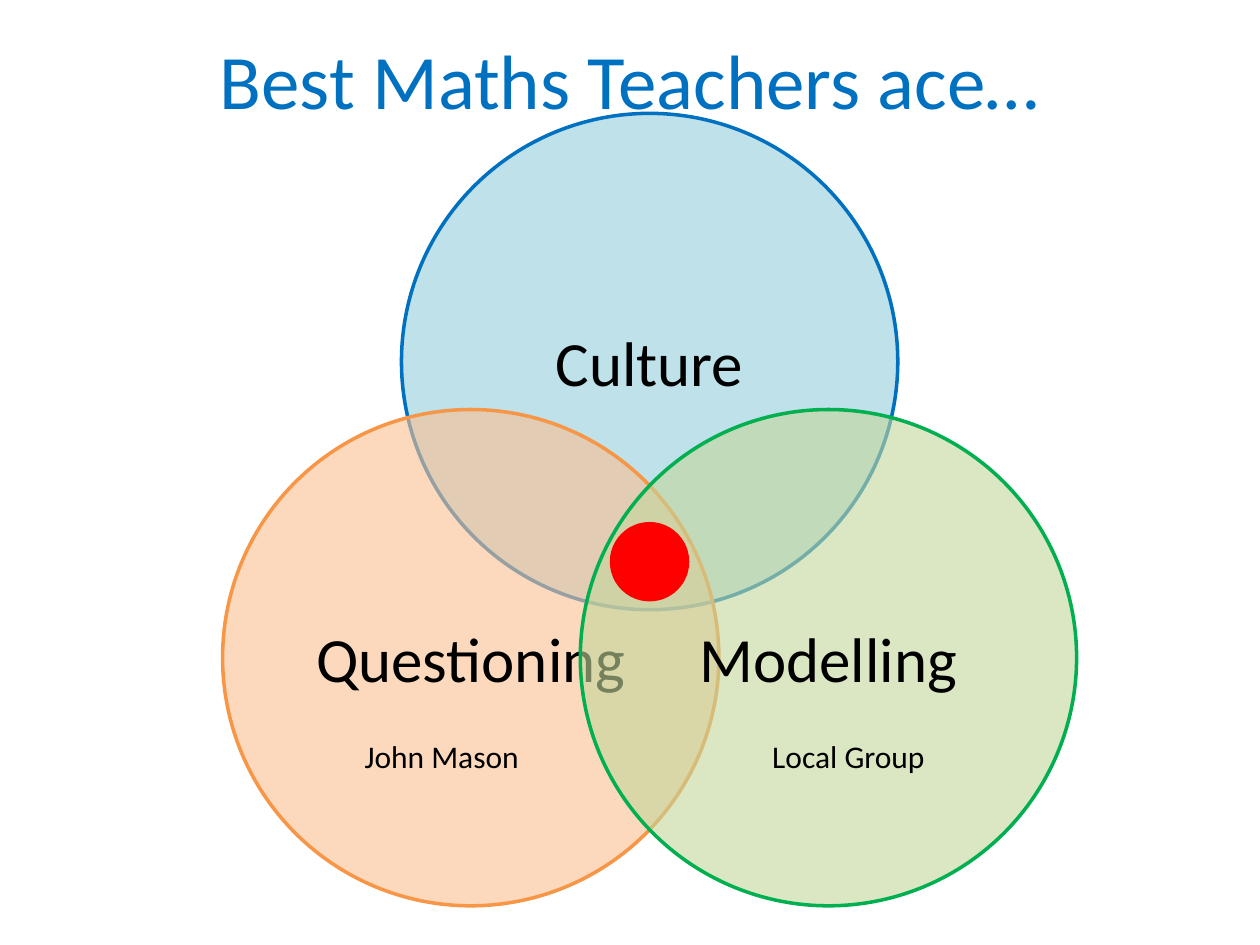
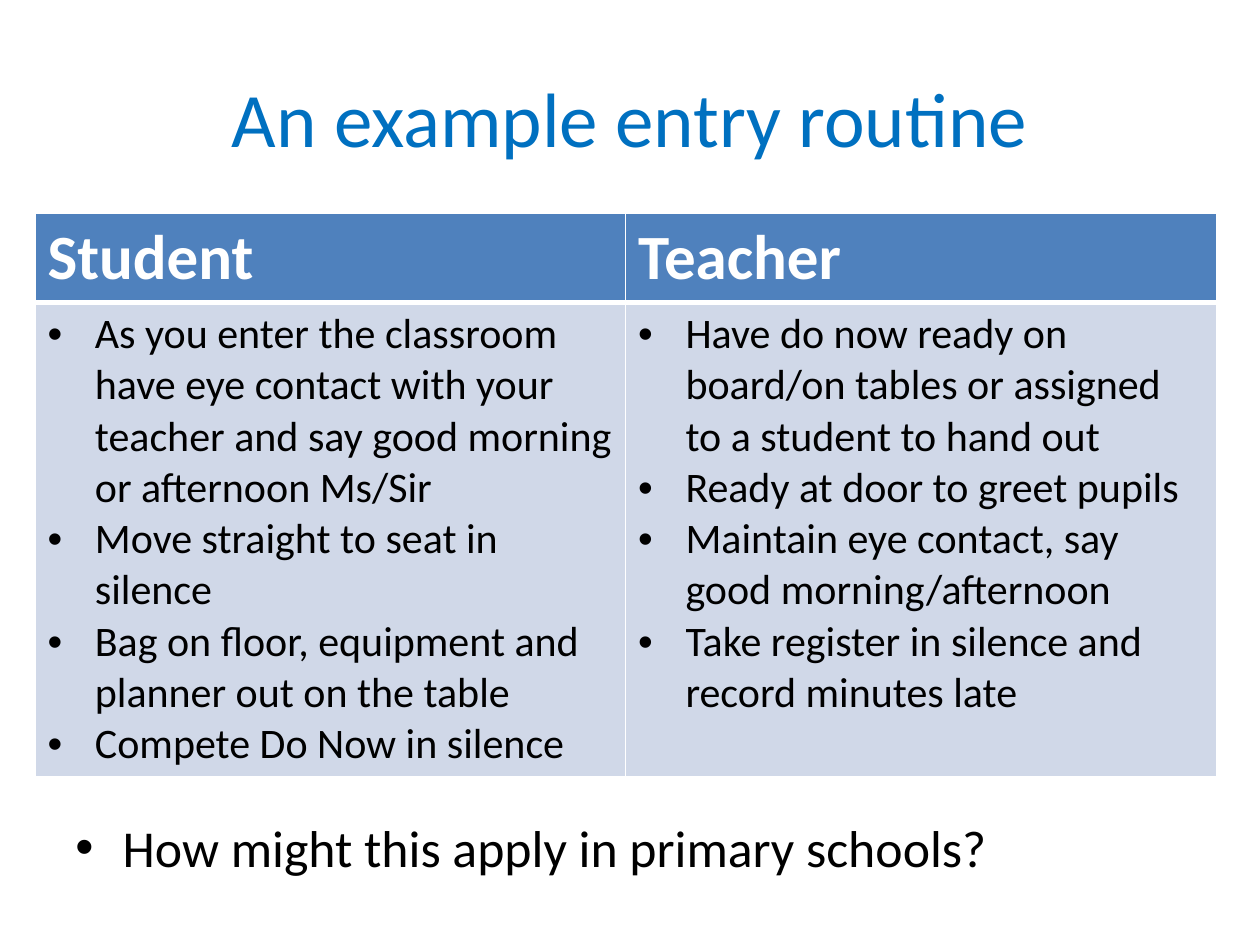
from dataclasses import dataclass

from lxml.etree import SubElement
from pptx import Presentation
from pptx.dml.color import RGBColor as RGB
from pptx.enum.shapes import MSO_SHAPE as SHAPE
from pptx.enum.text import MSO_ANCHOR as ANCHOR, MSO_AUTO_SIZE as AUTO, PP_ALIGN as ALIGN
from pptx.oxml.ns import qn
from pptx.util import Pt


@dataclass(frozen=True)
class Theme:
    font: str = "Calibri"
    title: str = "0070C0"
    text: str = "000000"
    white: str = "FFFFFF"
    header: str = "4F81BD"
    body: str = "D0D8E8"
    dot: str = "FF0000"
    culture: tuple = ("93CDDD", "0070C0")
    questioning: tuple = ("FAC090", "F79646")
    modelling: tuple = ("C3D69B", "00B050")
    title_size: float = 44
    heading_size: float = 36
    question_size: float = 29.6
    cell_size: float = 24
    note_size: float = 18
    indent: float = 27


T = Theme()
ROUTINE = {
    "Student": [
        "As you enter the classroom have eye contact with your teacher and say good morning or afternoon Ms/Sir",
        "Move straight to seat in silence",
        "Bag on floor, equipment and planner out on the table",
        "Compete Do Now in silence",
    ],
    "Teacher": [
        "Have do now ready on board/on tables or assigned to a student to hand out",
        "Ready at door to greet pupils",
        "Maintain eye contact, say good morning/afternoon",
        "Take register in silence and record minutes late",
    ],
}


def style_text(tf, size, color=T.text, align=ALIGN.LEFT, bold=False):
    for p in tf.paragraphs:
        p.alignment = align
        for r in p.runs:
            r.font.name, r.font.size, r.font.bold = T.font, Pt(size), bold
            r.font.color.rgb = RGB.from_string(color)


def add_bullets(tf):
    for p in tf.paragraphs:
        pPr = p._p.get_or_add_pPr()
        pPr.set("marL", str(Pt(T.indent)))
        pPr.set("indent", str(-Pt(T.indent)))
        SubElement(pPr, qn("a:buFont"), typeface="Arial")
        SubElement(pPr, qn("a:buChar"), char="•")


def add_titled_slide(prs, title, top):
    s = prs.slides.add_slide(prs.slide_layouts[5])
    sp = s.shapes.title
    sp.left, sp.top, sp.width, sp.height = Pt(36), Pt(top), Pt(648), Pt(90)
    tf = sp.text_frame
    tf.text = title
    tf.auto_size, tf.vertical_anchor = AUTO.NONE, ANCHOR.MIDDLE
    style_text(tf, T.title_size, T.title, ALIGN.CENTER)
    return s


def add_circle(s, x, y, radius, fill):
    sp = s.shapes.add_shape(SHAPE.OVAL, Pt(x - radius), Pt(y - radius), Pt(2 * radius), Pt(2 * radius))
    sp.shadow.inherit = False
    sp.fill.solid()
    sp.fill.fore_color.rgb = RGB.from_string(fill)
    sp.line.fill.background()
    return sp


def add_venn_circle(s, label, x, y, colors):
    fill, line = colors
    sp = add_circle(s, x, y, 141.8, fill)
    SubElement(sp.element.spPr.find(qn("a:solidFill"))[0], qn("a:alpha"), val="60000")
    sp.line.color.rgb = RGB.from_string(line)
    sp.line.width = Pt(2)
    tf = sp.text_frame
    tf.text = label
    tf.margin_left = tf.margin_right = 0
    tf.vertical_anchor = ANCHOR.MIDDLE
    style_text(tf, T.heading_size, align=ALIGN.CENTER)
    return sp


def add_text(s, text, x, y, w, h, size, align=ALIGN.LEFT):
    tf = s.shapes.add_textbox(Pt(x), Pt(y), Pt(w), Pt(h)).text_frame
    tf.text = text
    tf.word_wrap = True
    style_text(tf, size, align=align)
    return tf


def style_cell(cell, fill, top, bottom):
    tcPr = cell._tc.get_or_add_tcPr()
    for side, width in {"L": 1, "R": 1, "T": top, "B": bottom}.items():
        ln = SubElement(tcPr, qn(f"a:ln{side}"), w=str(Pt(width)))
        SubElement(SubElement(ln, qn("a:solidFill")), qn("a:srgbClr"), val=T.white)
    cell.fill.solid()
    cell.fill.fore_color.rgb = RGB.from_string(fill)


def add_routine_table(s, routine):
    table = s.shapes.add_table(2, len(routine), Pt(20), Pt(121.7), Pt(675), Pt(322)).table
    table.rows[0].height, table.rows[1].height = Pt(51.2), Pt(270.8)
    for col, (role, steps) in enumerate(routine.items()):
        head, body = table.cell(0, col), table.cell(1, col)
        head.text_frame.text = role
        style_text(head.text_frame, T.heading_size, T.white, bold=True)
        style_cell(head, T.header, 1, 3)
        body.text_frame.text = "\n".join(steps)
        style_text(body.text_frame, T.cell_size)
        add_bullets(body.text_frame)
        style_cell(body, T.body, 3, 1)


def build_venn(prs):
    s = add_titled_slide(prs, "Best Maths Teachers ace…", 0)
    center, spread, low = 371.2, 102.2, 375.8
    culture = add_venn_circle(s, "Culture", center, 206.6, T.culture)
    s.shapes.title.element.addprevious(culture.element)
    add_venn_circle(s, "Questioning", center - spread, low, T.questioning)
    add_venn_circle(s, "Modelling", center + spread, low, T.modelling)
    add_circle(s, center, 321, 22.7, T.dot)
    for note, x in (("John Mason", 178.6), ("Local Group", 411)):
        add_text(s, note, x, 417.6, 147.6, 29, T.note_size, ALIGN.CENTER)


def build_routine(prs):
    s = add_titled_slide(prs, "An example entry routine", 21.6)
    question = add_text(s, "How might this apply in primary schools?", 36, 462.6, 648, 37, T.question_size)
    add_bullets(question)
    add_routine_table(s, ROUTINE)


def main():
    prs = Presentation()
    prs.slide_width, prs.slide_height = Pt(720), Pt(540)
    build_venn(prs)
    build_routine(prs)
    prs.save("out.pptx")


if __name__ == "__main__":
    main()
